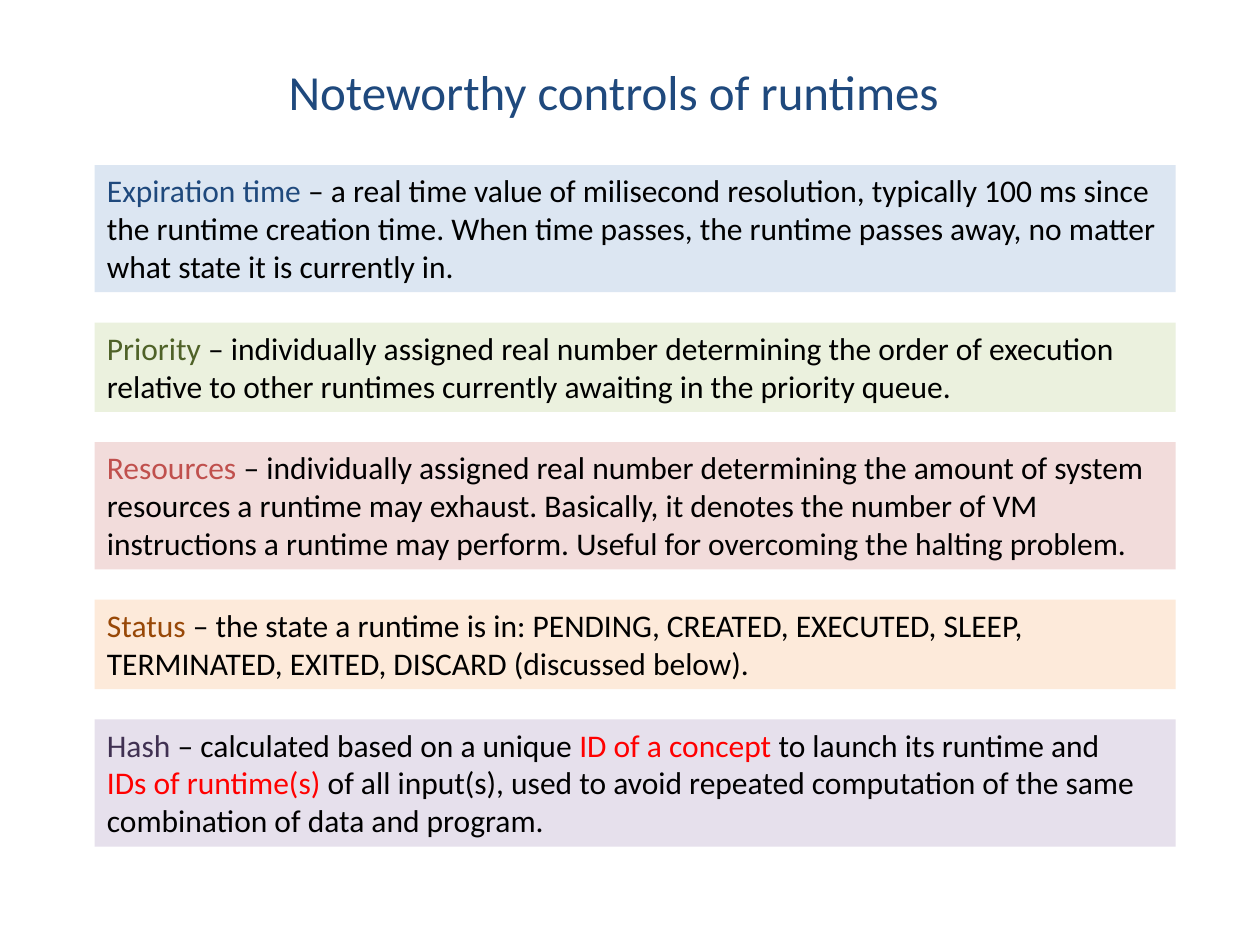
"""Build a slide listing the noteworthy controls of runtimes."""
from pptx import Presentation
from pptx.dml.color import RGBColor
from pptx.enum.shapes import MSO_SHAPE
from pptx.enum.text import MSO_ANCHOR, MSO_AUTO_SIZE, PP_ALIGN
from pptx.util import Inches, Pt

RECT = MSO_SHAPE.RECTANGLE
TOP = MSO_ANCHOR.TOP
GROW = MSO_AUTO_SIZE.SHAPE_TO_FIT_TEXT
LEFT, CENTER = PP_ALIGN.LEFT, PP_ALIGN.CENTER
TITLE_ONLY = 5

COLORS = {
    "navy": "1F497D", "green": "4F6228", "red": "C0504D",
    "brown": "984807", "purple": "403152",
    "pale_blue": "DCE6F2", "pale_green": "EBF1DE", "pale_red": "F2DCDB",
    "pale_orange": "FDEADA", "pale_purple": "E6E0EC",
    "text": "000000", "accent": "FF0000",
}

BOX_LEFT, BOX_TOP, BOX_WIDTH, GAP = 0.75, 1.31, 8.58, 0.24
TWO_LINES, THREE_LINES = 0.71, 1.01

CONTROLS = [
    (THREE_LINES, "pale_blue", [
        ("Expiration time ", "navy"),
        ("– a real time value of milisecond resolution, typically 100 ms since\n"
         "the runtime creation time. When time passes, the runtime passes away, "
         "no matter what state it is currently in.", "text")]),
    (TWO_LINES, "pale_green", [
        ("Priority ", "green"),
        ("– individually assigned real number determining the order of execution\n"
         "relative to other runtimes currently awaiting in the priority queue.", "text")]),
    (THREE_LINES, "pale_red", [
        ("Resources ", "red"),
        ("– individually assigned real number determining the amount of system "
         "resources a runtime may exhaust. Basically, it denotes the number of VM "
         "instructions a runtime may perform. Useful for overcoming the halting "
         "problem.", "text")]),
    (TWO_LINES, "pale_orange", [
        ("Status ", "brown"),
        ("– the state a runtime is in: PENDING, CREATED, EXECUTED, SLEEP, "
         "TERMINATED, EXITED, DISCARD (discussed below).", "text")]),
    (THREE_LINES, "pale_purple", [
        ("Hash ", "purple"),
        ("– calculated based on a unique ", "text"),
        ("ID of a concept", "accent"),
        (" to launch its runtime and\n", "text"),
        ("IDs of runtime(s)", "accent"),
        (" of all input(s), used to avoid repeated computation of the same "
         "combination of data and program.", "text")]),
]


class SlideBuilder:
    """Hold the text style and the current slide."""

    def __init__(self, slide, font="Calibri"):
        self.slide = slide
        self.font = font

    def color(self, name):
        return RGBColor.from_string(COLORS[name])

    def add_text(self, tf, runs, size, align, wrap):
        tf.word_wrap = wrap
        tf.auto_size = GROW
        tf.vertical_anchor = TOP
        p = tf.paragraphs[0]
        p.alignment = align
        for text, color in runs:
            for i, line in enumerate(text.split("\n")):
                if i:
                    p.add_line_break()
                if line:
                    r = p.add_run()
                    r.text = line
                    r.font.name = self.font
                    r.font.size = Pt(size)
                    r.font.color.rgb = self.color(color)

    def title(self, text, left, top, width, height):
        s = self.slide.shapes.title
        s.left, s.top = Inches(left), Inches(top)
        s.width, s.height = Inches(width), Inches(height)
        self.add_text(s.text_frame, [(text, "navy")], 28, CENTER, False)

    def box(self, runs, fill, left, top, width, height):
        s = self.slide.shapes.add_shape(
            RECT, Inches(left), Inches(top), Inches(width), Inches(height))
        s.shadow.inherit = False
        s.fill.solid()
        s.fill.fore_color.rgb = self.color(fill)
        s.line.fill.background()
        self.add_text(s.text_frame, runs, 18, LEFT, True)


def main():
    prs = Presentation()
    prs.slide_width, prs.slide_height = Inches(10), Inches(7.5)
    slide = prs.slides.add_slide(prs.slide_layouts[TITLE_ONLY])
    builder = SlideBuilder(slide)
    builder.title("Noteworthy controls of runtimes", 2.16, 0.44, 5.42, 0.57)
    top = BOX_TOP
    for height, fill, runs in CONTROLS:
        builder.box(runs, fill, BOX_LEFT, top, BOX_WIDTH, height)
        top += height + GAP
    prs.save("out.pptx")


if __name__ == "__main__":
    main()
